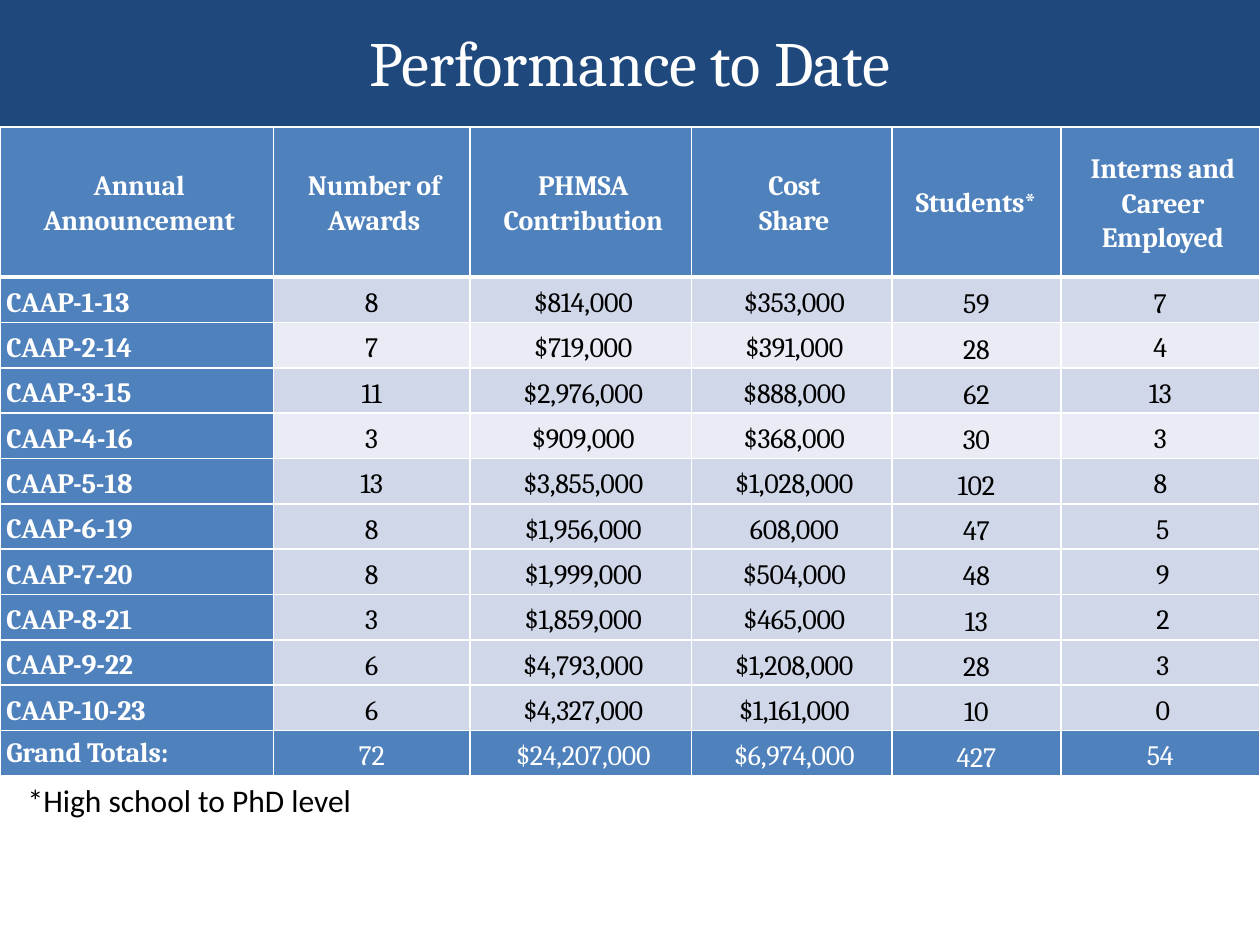
"""Build the Performance to Date slide with its award table."""
import lxml.etree
import pptx
import pptx.dml.color
import pptx.enum.shapes
import pptx.enum.text
import pptx.oxml.ns
import pptx.util

Inches = pptx.util.Inches
ALIGN = pptx.enum.text.PP_ALIGN
MIDDLE = pptx.enum.text.MSO_ANCHOR.MIDDLE
TOP = pptx.enum.text.MSO_ANCHOR.TOP

COLORS = {"navy": "1F497D", "blue": "4F81BC", "band": "D0D7E8", "pale": "E9ECF4",
          "white": "FFFFFF", "black": "000000"}
TITLE = "Performance to Date"
FOOTNOTE = "*High school to PhD level"
HEADERS = ["Annual\nAnnouncement", "Number of\nAwards", "PHMSA\nContribution",
           "Cost\nShare", "Students*", "Interns and\nCareer Employed"]
AWARDS = [
    ("CAAP-1-13", "8", "$814,000", "$353,000", "59", "7"),
    ("CAAP-2-14", "7", "$719,000", "$391,000", "28", "4"),
    ("CAAP-3-15", "11", "$2,976,000", "$888,000", "62", "13"),
    ("CAAP-4-16", "3", "$909,000", "$368,000", "30", "3"),
    ("CAAP-5-18", "13", "$3,855,000", "$1,028,000", "102", "8"),
    ("CAAP-6-19", "8", "$1,956,000", "608,000", "47", "5"),
    ("CAAP-7-20", "8", "$1,999,000", "$504,000", "48", "9"),
    ("CAAP-8-21", "3", "$1,859,000", "$465,000", "13", "2"),
    ("CAAP-9-22", "6", "$4,793,000", "$1,208,000", "28", "3"),
    ("CAAP-10-23", "6", "$4,327,000", "$1,161,000", "10", "0"),
]
TOTALS = ("Grand Totals:", "72", "$24,207,000", "$6,974,000", "427", "54")
COLUMN_WIDTHS = [2.17, 1.56, 1.76, 1.59, 1.34, 1.58]
HEADER_HEIGHT, ROW_HEIGHT = 1.19, 0.36
PALE_ROWS = (2, 4)
LABEL, STUDENTS, INTERNS = 0, 4, 5
INDENTED_INTERN_ROWS = range(6, 11)


def rgb(name):
    return pptx.dml.color.RGBColor.from_string(COLORS[name])


def set_values(target, values):
    for name, value in values.items():
        setattr(target, name, value)


def write(frame, text, font, color, layout=None, indent=0, tracking=-10):
    frame.text = text
    for para in frame.paragraphs:
        set_values(para, layout or {})
        if indent:
            para._p.get_or_add_pPr().set("marL", str(Inches(indent)))
        for span in para.runs:
            set_values(span.font, font)
            span.font.color.rgb = rgb(color)
            span._r.get_or_add_rPr().set("spc", str(tracking))


def add_borders(cell, widths):
    properties = cell._tc.get_or_add_tcPr()
    for side, width in widths.items():
        line = lxml.etree.SubElement(properties, pptx.oxml.ns.qn(f"a:ln{side}"),
                                     w=str(pptx.util.Pt(width)))
        fill = lxml.etree.SubElement(line, pptx.oxml.ns.qn("a:solidFill"))
        lxml.etree.SubElement(fill, pptx.oxml.ns.qn("a:srgbClr"), val=COLORS["white"])


def fill_cell(cell, text, row, column, last_row):
    header, label, total = row == 0, column == LABEL, row == last_row
    strong = header or label
    indented = column != STUDENTS and (label or header or column in (2, 3))
    indented = indented or (column == INTERNS and row in INDENTED_INTERN_ROWS)
    raised = (label and not total) or column == STUDENTS or (column == INTERNS and row == 1)
    top = 0.01 if header else 0.06 if raised else 0.04
    if header and column == STUDENTS:
        top = 0
    set_values(cell, {
        "margin_left": Inches(0.01), "margin_right": Inches(0.01),
        "margin_top": Inches(top), "margin_bottom": 0,
        "vertical_anchor": TOP if label and not header else MIDDLE,
    })
    write(cell.text_frame, text,
          {"name": "Cambria", "size": pptx.util.Pt(16), "bold": strong},
          "white" if strong or total else "black",
          {"alignment": ALIGN.LEFT if label and not header else ALIGN.CENTER,
           "line_spacing": 1.07},
          0.04 if indented else 0)
    add_borders(cell, {"L": 1, "R": 1, "T": 3 if row == 1 else 1, "B": 3 if header else 1})
    cell.fill.solid()
    shade = "blue" if strong or total else "pale" if row in PALE_ROWS else "band"
    cell.fill.fore_color.rgb = rgb(shade)


def add_footnote(page):
    box = page.shapes.add_textbox(Inches(0.21), Inches(6.18), Inches(2.6), Inches(0.33))
    set_values(box.text_frame, {
        "word_wrap": True, "margin_left": 0, "margin_right": 0,
        "margin_top": Inches(0.02), "margin_bottom": 0,
    })
    write(box.text_frame, FOOTNOTE, {"name": "Calibri", "size": pptx.util.Pt(18)},
          "black", indent=0.01, tracking=0)


def add_award_table(page):
    rows = [HEADERS, *AWARDS, TOTALS]
    last_row = len(rows) - 1
    height = HEADER_HEIGHT + ROW_HEIGHT * last_row
    table = page.shapes.add_table(len(rows), len(HEADERS), 0, Inches(1.01),
                                  Inches(10), Inches(height)).table
    for column, width in zip(table.columns, COLUMN_WIDTHS):
        column.width = Inches(width)
    for row, texts in enumerate(rows):
        table.rows[row].height = Inches(ROW_HEIGHT if row else HEADER_HEIGHT)
        for column, text in enumerate(texts):
            fill_cell(table.cell(row, column), text, row, column, last_row)


def add_title(page):
    banner = page.shapes.add_shape(pptx.enum.shapes.MSO_SHAPE.RECTANGLE,
                                   0, Inches(-0.03), Inches(10), Inches(1.03))
    banner.shadow.inherit = False
    banner.fill.solid()
    banner.fill.fore_color.rgb = rgb("navy")
    banner.line.fill.background()
    banner.text_frame.vertical_anchor = MIDDLE
    write(banner.text_frame, TITLE, {"name": "Cambria", "size": pptx.util.Pt(36)},
          "white", {"alignment": ALIGN.CENTER})


def main():
    deck = pptx.Presentation()
    set_values(deck, {"slide_width": Inches(10), "slide_height": Inches(7.5)})
    page = deck.slides.add_slide(deck.slide_layouts[6])
    add_footnote(page)
    add_award_table(page)
    add_title(page)
    deck.save("out.pptx")


if __name__ == "__main__":
    main()
